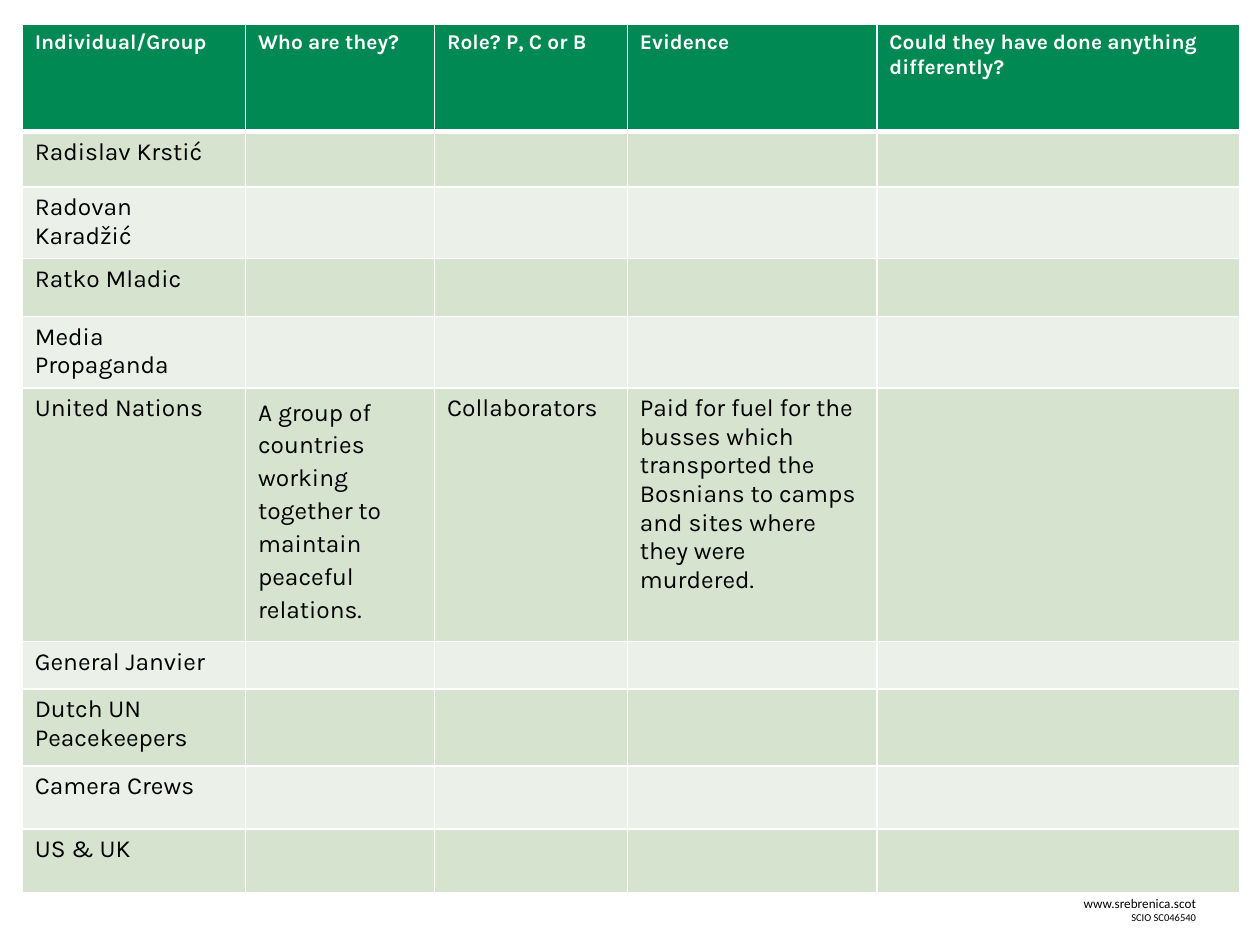
from dataclasses import dataclass

from lxml.etree import SubElement
from pptx import Presentation
from pptx.dml.color import RGBColor
from pptx.enum.text import PP_ALIGN
from pptx.oxml.ns import qn
from pptx.util import Pt


@dataclass(frozen=True)
class Theme:
    header: RGBColor = RGBColor.from_string("008952")
    band_dark: RGBColor = RGBColor.from_string("D5E3CF")
    band_light: RGBColor = RGBColor.from_string("EBF1E9")
    white: RGBColor = RGBColor.from_string("FFFFFF")
    black: RGBColor = RGBColor.from_string("000000")
    table_font: str = "Karla"
    footer_font: str = "Calibri"
    header_size: float = 12
    body_size: float = 14
    site_size: float = 7.5
    charity_size: float = 6


THEME = Theme()
COLUMN_WIDTHS = [127.6, 108, 110.2, 142.6, 207.4]
ROW_HEIGHTS = [61.6, 31.7, 31.7, 33.1, 23.8, 144.7, 27.4, 43.9, 36, 36.7]
HEADINGS = ["Individual/Group", "Who are they?", "Role? P, C or B", "Evidence",
            "Could they have done anything differently?"]
ENTRIES = [
    ["Radislav Krstić"],
    ["Radovan Karadžić"],
    ["Ratko Mladic"],
    ["Media Propaganda"],
    ["United Nations",
     "A group of countries working together to maintain peaceful relations.",
     "Collaborators",
     "Paid for fuel for the busses which transported the Bosnians to camps "
     "and sites where they were murdered."],
    ["General Janvier"],
    ["Dutch UN Peacekeepers"],
    ["Camera Crews"],
    ["US & UK"],
]
LOOSE_CELL = (5, 1)  # the definition set with wider line spacing


def style_font(font, name, size, color, bold=False):
    font.name = name
    font.size = Pt(size)
    font.color.rgb = color
    font.bold = bold


def add_borders(cell, top, bottom):
    properties = cell._tc.get_or_add_tcPr()
    for side, width in (("L", 1), ("R", 1), ("T", top), ("B", bottom)):
        line = SubElement(properties, qn(f"a:ln{side}"), w=str(Pt(width)))
        fill = SubElement(line, qn("a:solidFill"))
        SubElement(fill, qn("a:srgbClr"), val=str(THEME.white))


def fill_cell(cell, row, text):
    is_header = row == 0
    add_borders(cell, top=3 if row == 1 else 1, bottom=3 if is_header else 1)
    band = THEME.band_dark if row % 2 else THEME.band_light
    cell.fill.solid()
    cell.fill.fore_color.rgb = THEME.header if is_header else band
    paragraph = cell.text_frame.paragraphs[0]
    size = THEME.header_size if is_header else THEME.body_size
    if text:
        paragraph.text = text
        style_font(paragraph.font, THEME.table_font, size,
                   THEME.white if is_header else THEME.black, is_header)
    else:
        # Keeps an empty cell from stretching its row
        SubElement(paragraph._p, qn("a:endParaRPr"), sz=str(int(size * 100)))


def add_groups_table(slide):
    groups = slide.shapes.add_table(
        len(ROW_HEIGHTS), len(COLUMN_WIDTHS), Pt(12.7), Pt(13.7),
        Pt(sum(COLUMN_WIDTHS)), Pt(sum(ROW_HEIGHTS))).table
    for column, width in zip(groups.columns, COLUMN_WIDTHS):
        column.width = Pt(width)
    for row, height in zip(groups.rows, ROW_HEIGHTS):
        row.height = Pt(height)
    for row, texts in enumerate([HEADINGS] + ENTRIES):
        for column in range(len(COLUMN_WIDTHS)):
            text = texts[column] if column < len(texts) else ""
            fill_cell(groups.cell(row, column), row, text)
    definition = groups.cell(*LOOSE_CELL).text_frame.paragraphs[0]
    definition.line_spacing = 1.15


def add_footer(slide):
    """Place the footer just clear of the table's bottom edge."""
    frame = slide.shapes.add_textbox(Pt(508.3), Pt(508), Pt(182.2), Pt(28.8)).text_frame
    frame.word_wrap = True
    site, charity = frame.paragraphs[0], frame.add_paragraph()
    for paragraph, text, size in (
            (site, "www.srebrenica.scot", THEME.site_size),
            (charity, "SCIO SC046540", THEME.charity_size)):
        paragraph.text = text
        paragraph.alignment = PP_ALIGN.RIGHT
        style_font(paragraph.font, THEME.footer_font, size, THEME.black)


def main():
    presentation = Presentation()
    presentation.slide_width, presentation.slide_height = Pt(720), Pt(540)
    slide = presentation.slides.add_slide(presentation.slide_layouts[6])
    add_footer(slide)
    add_groups_table(slide)
    presentation.save("out.pptx")


if __name__ == "__main__":
    main()
